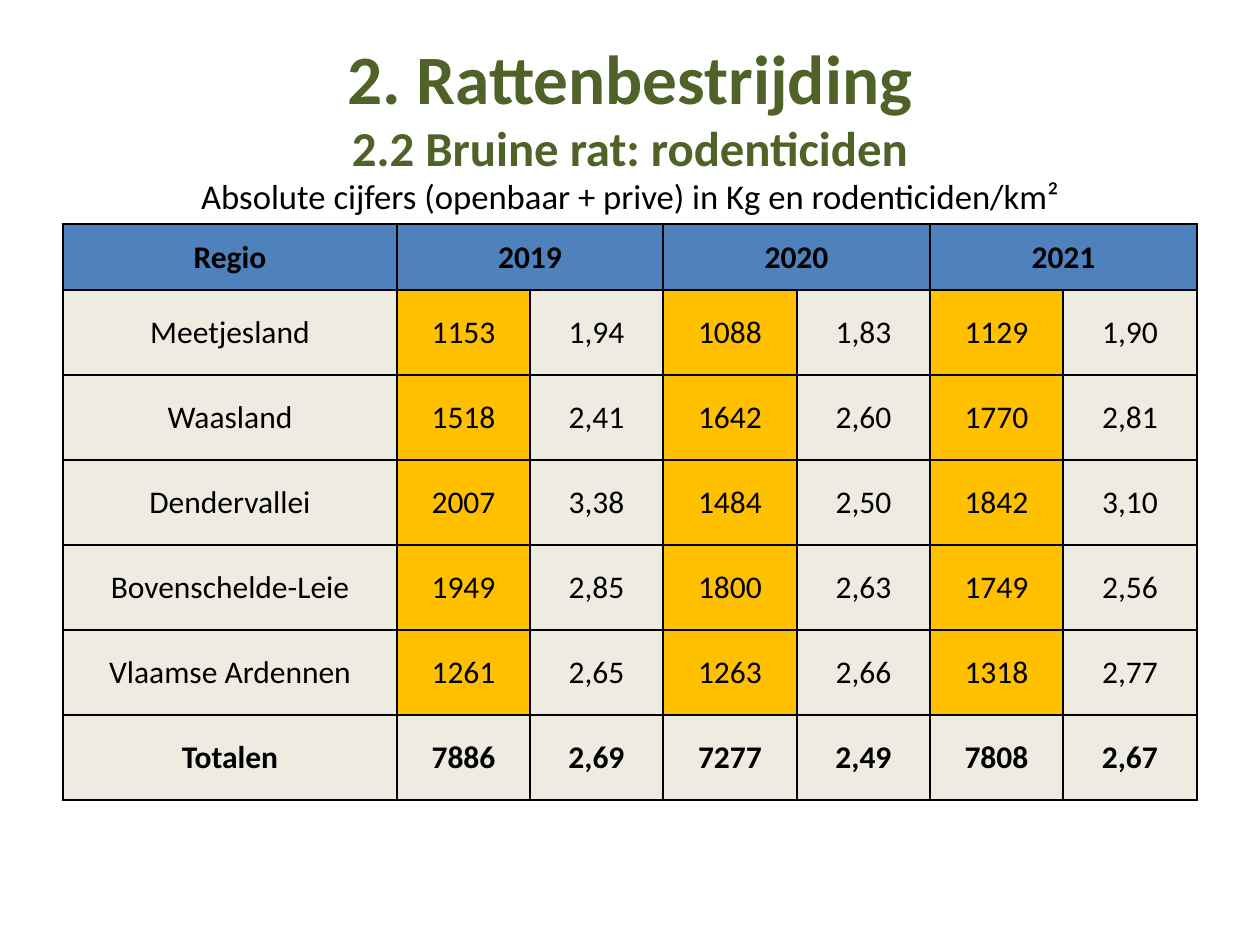
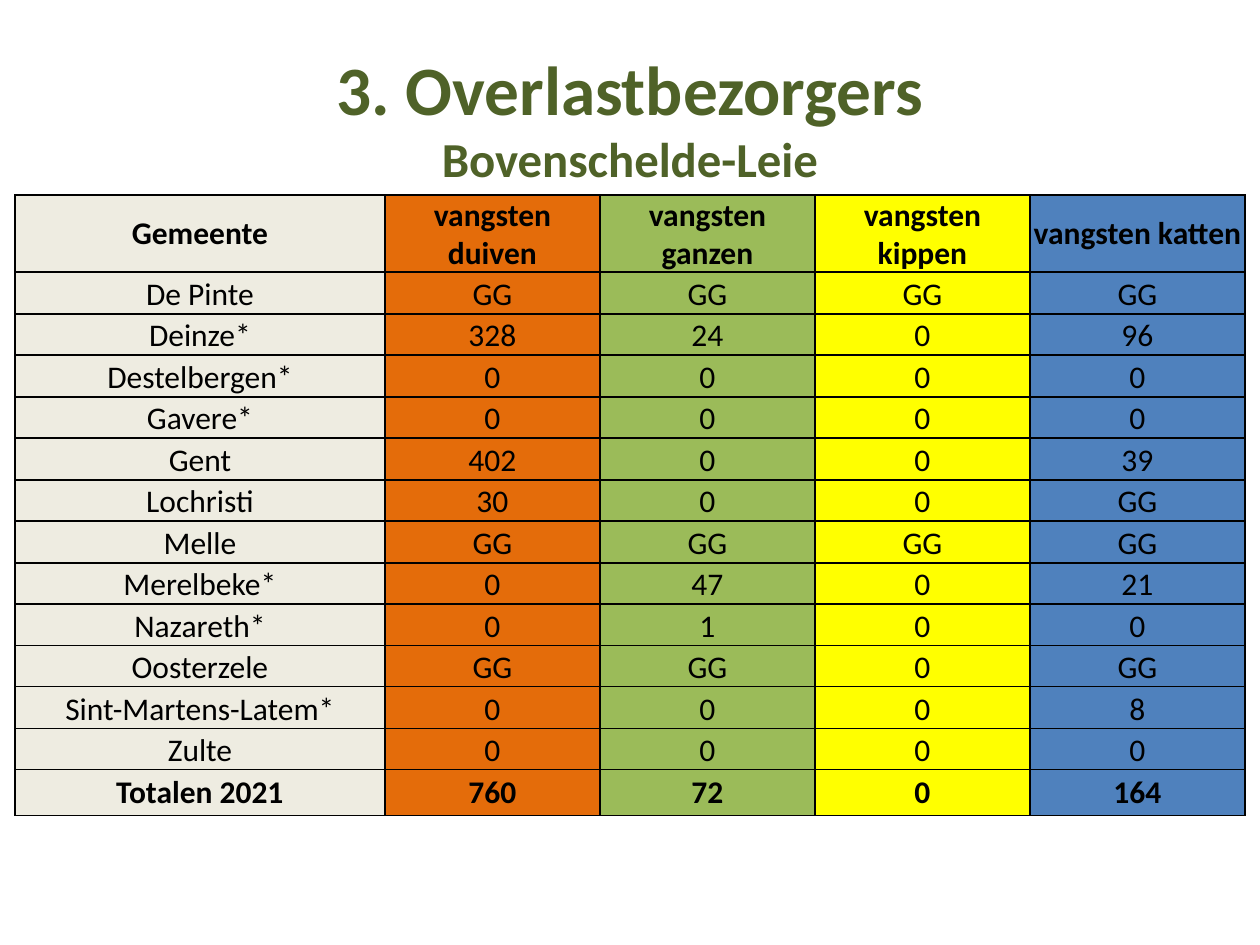
from dataclasses import dataclass

from lxml import etree
from pptx import Presentation
from pptx.dml.color import RGBColor
from pptx.enum.text import MSO_ANCHOR, PP_ALIGN
from pptx.oxml.ns import qn
from pptx.util import Emu, Pt

CENTER = PP_ALIGN.CENTER
MIDDLE, BOTTOM, TOP = MSO_ANCHOR.MIDDLE, MSO_ANCHOR.BOTTOM, MSO_ANCHOR.TOP
EMU_PER_PX = 914400 / 126
BLANK_LAYOUT = 6


@dataclass(frozen=True)
class Theme:
    font: str = "Calibri"
    title_color: str = "4F6228"
    text_color: str = "000000"
    border_color: str = "000000"
    blue: str = "4F81BD"
    cream: str = "EEECE1"
    amber: str = "FFC000"
    orange: str = "E46C0A"
    green: str = "9BBB59"
    yellow: str = "FFFF00"
    title_size: float = 39.6
    subtitle_size: float = 27.9
    caption_size: float = 19.8
    table_size: float = 18
    border_width: float = 1
    title_spacing: float = 0.97


THEME = Theme()


@dataclass(frozen=True)
class Heading:
    title: str
    subtitle: str
    top: int
    caption: str = ""


@dataclass(frozen=True)
class TableLayout:
    left: int
    top: int
    column_widths: list[int]
    row_heights: list[int]
    body_anchor: MSO_ANCHOR
    header_margin: int = 1


@dataclass(frozen=True)
class CellStyle:
    fill: str
    bold: bool
    anchor: MSO_ANCHOR
    side_margin: int = 1


RODENTICIDE_HEADING = Heading(
    "2. Rattenbestrijding",
    "2.2 Bruine rat: rodenticiden",
    40,
    "Absolute cijfers (openbaar + prive) in Kg en rodenticiden/km²",
)
RODENTICIDE_LAYOUT = TableLayout(
    63, 224, [334] + [133, 133, 134] * 2, [66] + [85] * 6, MIDDLE
)
RODENTICIDE_ROWS = [
    ["Regio", "2019", "", "2020", "", "2021", ""],
    ["Meetjesland", "1153", "1,94", "1088", "1,83", "1129", "1,90"],
    ["Waasland", "1518", "2,41", "1642", "2,60", "1770", "2,81"],
    ["Dendervallei", "2007", "3,38", "1484", "2,50", "1842", "3,10"],
    ["Bovenschelde-Leie", "1949", "2,85", "1800", "2,63", "1749", "2,56"],
    ["Vlaamse Ardennen", "1261", "2,65", "1263", "2,66", "1318", "2,77"],
    ["Totalen", "7886", "2,69", "7277", "2,49", "7808", "2,67"],
]

CATCH_HEADING = Heading("3. Overlastbezorgers", "Bovenschelde-Leie", 51)
CATCH_LAYOUT = TableLayout(
    15, 195, [370] + [215] * 4, [77] + [42, 41] * 6 + [46], BOTTOM, header_margin=3
)
CATCH_COLUMN_FILLS = [THEME.cream, THEME.orange, THEME.green, THEME.yellow, THEME.blue]
CATCH_ROWS = [
    ["Gemeente", "vangsten duiven", "vangsten ganzen", "vangsten kippen", "vangsten katten"],
    ["De Pinte", "GG", "GG", "GG", "GG"],
    ["Deinze*", "328", "24", "0", "96"],
    ["Destelbergen*", "0", "0", "0", "0"],
    ["Gavere*", "0", "0", "0", "0"],
    ["Gent", "402", "0", "0", "39"],
    ["Lochristi", "30", "0", "0", "GG"],
    ["Melle", "GG", "GG", "GG", "GG"],
    ["Merelbeke*", "0", "47", "0", "21"],
    ["Nazareth*", "0", "1", "0", "0"],
    ["Oosterzele", "GG", "GG", "0", "GG"],
    ["Sint-Martens-Latem*", "0", "0", "0", "8"],
    ["Zulte", "0", "0", "0", "0"],
    ["Totalen 2021", "760", "72", "0", "164"],
]


def px(value: int) -> Emu:
    return Emu(round(value * EMU_PER_PX))


def write_text(paragraph, text: str, *, size: float, color: str = THEME.text_color,
               bold: bool = False, line_spacing: float = 1.0) -> None:
    paragraph.alignment = CENTER
    paragraph.line_spacing = line_spacing
    run = paragraph.add_run()
    run.text = text
    run.font.name = THEME.font
    run.font.size = Pt(size)
    run.font.bold = bold
    run.font.color.rgb = RGBColor.from_string(color)


def add_heading(slide, heading: Heading) -> None:
    text_frame = slide.shapes.add_textbox(
        px(63), px(heading.top), px(1134), px(158)).text_frame
    text_frame.word_wrap = True
    text_frame.vertical_anchor = TOP
    text_frame.margin_top = text_frame.margin_bottom = 0
    lines = [
        (heading.title, THEME.title_size, THEME.title_color, True),
        (heading.subtitle, THEME.subtitle_size, THEME.title_color, True),
    ]
    if heading.caption:
        lines.append((heading.caption, THEME.caption_size, THEME.text_color, False))
    for index, (text, size, color, bold) in enumerate(lines):
        paragraph = text_frame.add_paragraph() if index else text_frame.paragraphs[0]
        write_text(paragraph, text, size=size, color=color, bold=bold,
                   line_spacing=THEME.title_spacing)


def add_borders(cell) -> None:
    """Draw all four sides; must run before the fill is set."""
    properties = cell._tc.get_or_add_tcPr()
    for side in ("lnL", "lnR", "lnT", "lnB"):
        line = etree.SubElement(properties, qn(f"a:{side}"), w=str(Pt(THEME.border_width)))
        fill = etree.SubElement(line, qn("a:solidFill"))
        etree.SubElement(fill, qn("a:srgbClr"), val=THEME.border_color)


def format_cell(cell, text: str, style: CellStyle) -> None:
    add_borders(cell)
    cell.fill.solid()
    cell.fill.fore_color.rgb = RGBColor.from_string(style.fill)
    cell.vertical_anchor = style.anchor
    cell.margin_left = cell.margin_right = px(style.side_margin)
    cell.margin_top = px(1)
    cell.margin_bottom = 0
    if text:
        write_text(cell.text_frame.paragraphs[0], text,
                   size=THEME.table_size, bold=style.bold)


def add_data_table(slide, layout: TableLayout, rows: list[list[str]],
                   fills: list[list[str]]):
    """Add a table whose first and last rows are bold."""
    table = slide.shapes.add_table(
        len(rows), len(rows[0]), px(layout.left), px(layout.top),
        px(sum(layout.column_widths)), px(sum(layout.row_heights))).table
    table.first_row = table.horz_banding = False
    for column, width in zip(table.columns, layout.column_widths):
        column.width = px(width)
    for row, height in zip(table.rows, layout.row_heights):
        row.height = px(height)
    last = len(rows) - 1
    for row_index, (texts, row_fills) in enumerate(zip(rows, fills)):
        is_edge = row_index in (0, last)
        anchor = MIDDLE if is_edge else layout.body_anchor
        margin = layout.header_margin if row_index == 0 else 1
        for column_index, (text, fill) in enumerate(zip(texts, row_fills)):
            format_cell(table.cell(row_index, column_index), text,
                        CellStyle(fill, is_edge, anchor, margin))
    return table


def build_rodenticide_slide(slide) -> None:
    add_heading(slide, RODENTICIDE_HEADING)
    region_fills = [THEME.cream] + [THEME.amber, THEME.cream] * 3
    fills = [[THEME.blue] * 7] + [region_fills] * 5 + [[THEME.cream] * 7]
    table = add_data_table(slide, RODENTICIDE_LAYOUT, RODENTICIDE_ROWS, fills)
    for column in (1, 3, 5):
        table.cell(0, column).merge(table.cell(0, column + 1))


def build_catch_slide(slide) -> None:
    add_heading(slide, CATCH_HEADING)
    add_data_table(slide, CATCH_LAYOUT, CATCH_ROWS, [CATCH_COLUMN_FILLS] * len(CATCH_ROWS))


def main() -> None:
    presentation = Presentation()
    presentation.slide_width = px(1260)
    presentation.slide_height = px(945)
    for build in (build_rodenticide_slide, build_catch_slide):
        build(presentation.slides.add_slide(presentation.slide_layouts[BLANK_LAYOUT]))
    presentation.save("out.pptx")


if __name__ == "__main__":
    main()
